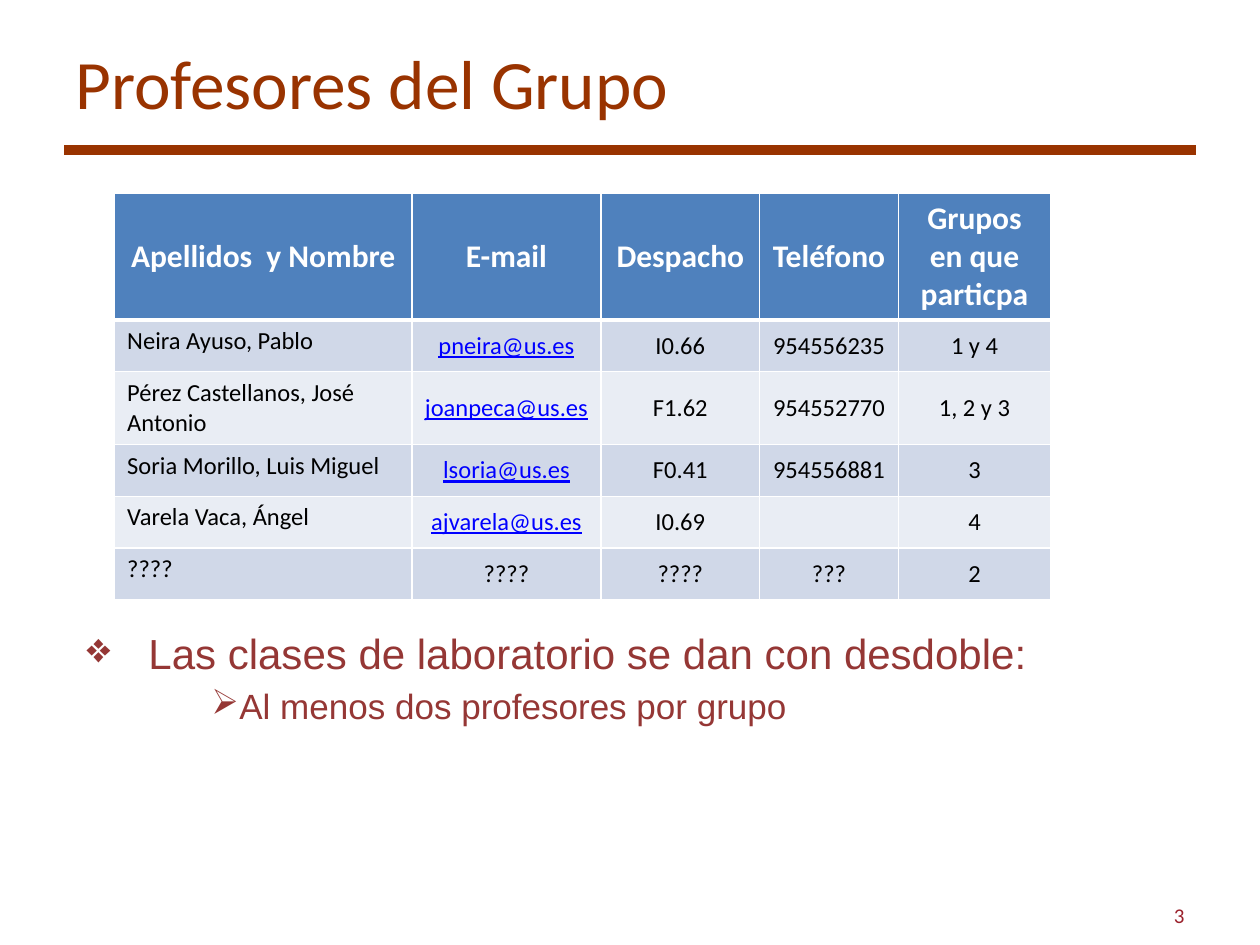
from lxml.etree import SubElement
from pptx import Presentation
from pptx.dml.color import RGBColor
from pptx.enum.shapes import MSO_CONNECTOR
from pptx.enum.text import MSO_ANCHOR, PP_ALIGN
from pptx.oxml.ns import qn
from pptx.util import Inches, Pt

COLORS = {
    "rust": "993300",
    "number": "9B212C",
    "note": "953735",
    "header": "4F81BD",
    "odd_row": "D0D8E8",
    "even_row": "E9EDF4",
    "white": "FFFFFF",
    "black": "000000",
    "email": "0000FF",
}
COLUMN_WIDTHS = [2.36, 1.5, 1.26, 1.1, 1.21]
ROW_HEIGHTS = [1.01, 0.41, 0.58, 0.41, 0.41, 0.41]
TEACHERS = [
    ["Apellidos  y Nombre", "E-mail", "Despacho", "Teléfono", "Grupos en que particpa"],
    ["Neira Ayuso, Pablo", "pneira@us.es", "I0.66", "954556235", "1 y 4"],
    ["Pérez Castellanos, José Antonio", "joanpeca@us.es", "F1.62", "954552770", "1, 2 y 3"],
    ["Soria Morillo, Luis Miguel", "lsoria@us.es", "F0.41", "954556881", "3"],
    ["Varela Vaca, Ángel", "ajvarela@us.es", "I0.69", "", "4"],
    ["????", "????", "????", "???", "2"],
]


def color(name):
    return RGBColor.from_string(COLORS[name])


def format_font(font, size, color_name, name="Calibri", bold=False):
    font.size = Pt(size)
    font.name = name
    font.bold = bold
    font.color.rgb = color(color_name)


def add_text_box(slide, left, top, width, height, anchor):
    shape = slide.shapes.add_textbox(
        Inches(left), Inches(top), Inches(width), Inches(height))
    text_frame = shape.text_frame
    text_frame.word_wrap = True
    text_frame.vertical_anchor = anchor
    return text_frame


def add_line_of_text(slide, box, text, size, color_name, alignment):
    text_frame = add_text_box(slide, *box, MSO_ANCHOR.MIDDLE)
    text_frame.text = text
    paragraph = text_frame.paragraphs[0]
    paragraph.alignment = alignment
    format_font(paragraph.runs[0].font, size, color_name)


def add_title_rule(slide, left, top, width):
    connector = slide.shapes.add_connector(
        MSO_CONNECTOR.STRAIGHT, Inches(left), Inches(top),
        Inches(left + width), Inches(top))
    connector.line.color.rgb = color("rust")
    connector.line.width = Pt(6)
    SubElement(connector._element.spPr, qn("a:effectLst"))


def set_borders(cell, bottom_width):
    properties = cell._tc.get_or_add_tcPr()
    widths = {"a:lnL": 1, "a:lnR": 1, "a:lnT": 1, "a:lnB": bottom_width}
    for tag, width in widths.items():
        border = SubElement(properties, qn(tag), w=str(Pt(width)))
        fill = SubElement(border, qn("a:solidFill"))
        SubElement(fill, qn("a:srgbClr"), val=COLORS["white"])


def fill_cell(cell, text, row, column):
    is_header = row == 0
    is_name = column == 0 and not is_header
    is_email = "@" in text
    set_borders(cell, 3 if is_header else 1)
    cell.fill.solid()
    cell.fill.fore_color.rgb = color(
        "header" if is_header else "odd_row" if row % 2 else "even_row")
    cell.vertical_anchor = MSO_ANCHOR.TOP if is_name else MSO_ANCHOR.MIDDLE
    cell.text = text
    paragraph = cell.text_frame.paragraphs[0]
    paragraph.alignment = PP_ALIGN.LEFT if is_name else PP_ALIGN.CENTER
    text_color = "white" if is_header else "email" if is_email else "black"
    for run in paragraph.runs:
        format_font(run.font, 18 if is_header else 14, text_color, bold=is_header)
        run.font.underline = is_email


def add_teacher_table(slide, left, top):
    table = slide.shapes.add_table(
        len(TEACHERS), len(COLUMN_WIDTHS), Inches(left), Inches(top),
        Inches(sum(COLUMN_WIDTHS)), Inches(sum(ROW_HEIGHTS))).table
    for column, width in zip(table.columns, COLUMN_WIDTHS):
        column.width = Inches(width)
    for row, height in zip(table.rows, ROW_HEIGHTS):
        row.height = Inches(height)
    for row, values in enumerate(TEACHERS):
        for column, text in enumerate(values):
            fill_cell(table.cell(row, column), text, row, column)


def format_bullet(paragraph, symbol, margin, indent):
    properties = paragraph._p.get_or_add_pPr()
    properties.set("marL", str(Inches(margin)))
    properties.set("indent", str(Inches(indent)))
    SubElement(properties, qn("a:buChar"), char=symbol)


def add_laboratory_notes(slide, left, top, width, height):
    text_frame = add_text_box(slide, left, top, width, height, MSO_ANCHOR.TOP)
    notes = [
        ("Las clases de laboratorio se dan con desdoble:", "❖", 0.49, -0.49, 24),
        ("Al menos dos profesores por grupo", "➢", 0.69, 0.3, 20),
    ]
    text_frame.text = "\n".join(note[0] for note in notes)
    for level, (paragraph, note) in enumerate(zip(text_frame.paragraphs, notes)):
        text, symbol, margin, indent, size = note
        format_bullet(paragraph, symbol, margin, indent)
        paragraph.level = level
        paragraph.alignment = PP_ALIGN.JUSTIFY
        if level:
            paragraph.space_before = Pt(size * 0.2)
        format_font(paragraph.runs[0].font, size, "note", "Arial")


def main():
    presentation = Presentation()
    presentation.slide_width = Inches(10)
    presentation.slide_height = Inches(7.5)
    slide = presentation.slides.add_slide(presentation.slide_layouts[6])
    add_title_rule(slide, 0.51, 1.19, 8.98)
    add_line_of_text(slide, (0.5, 0.3, 9, 0.69), "Profesores del Grupo",
                     39.6, "rust", PP_ALIGN.LEFT)
    add_line_of_text(slide, (7.17, 7.06, 2.33, 0.4), "3",
                     12, "number", PP_ALIGN.RIGHT)
    add_teacher_table(slide, 0.91, 1.53)
    add_laboratory_notes(slide, 0.59, 4.93, 8.66, 1.23)
    presentation.save("out.pptx")


if __name__ == "__main__":
    main()
